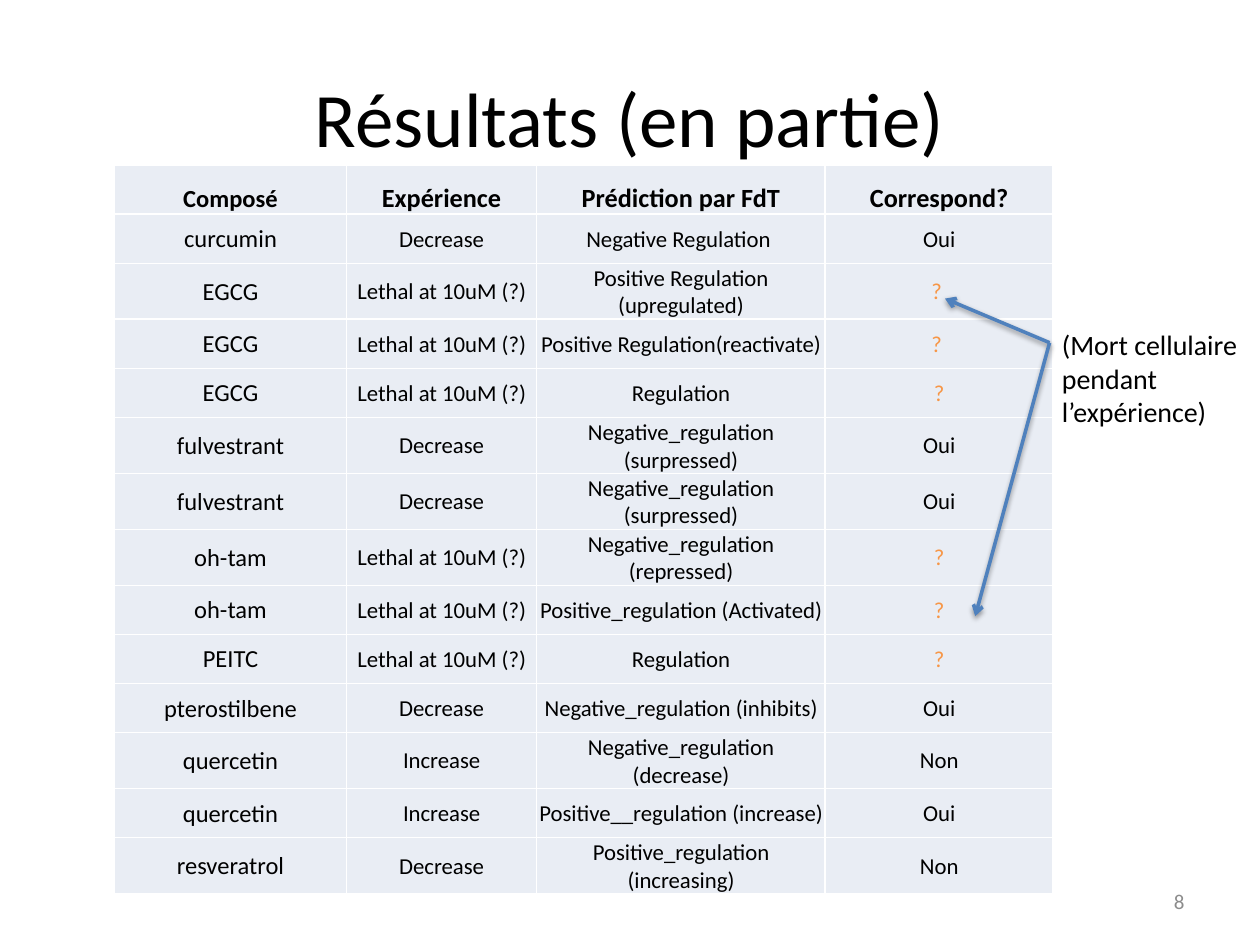
from dataclasses import dataclass

import pptx
import pptx.dml.color
import pptx.enum.shapes
import pptx.enum.text
import pptx.oxml
import pptx.oxml.ns
import pptx.util

W, H = 10, 7.5
FONT = "Calibri"
COLORS = {"text": "000000", "number": "8C8C8C", "cell": "E9EDF4",
          "border": "FFFFFF", "unsure": "F79646", "arrow": "4F81BD"}
ALIGN = pptx.enum.text.PP_ALIGN
ANCHOR = pptx.enum.text.MSO_ANCHOR
NS = pptx.oxml.ns.nsdecls("a")


@dataclass
class Box:
    """A place given as shares of the slide's width and height."""
    x: float
    y: float
    w: float
    h: float

    def emu(self) -> list[int]:
        return [pptx.util.Inches(round(v, 2)) for v in
                (self.x * W, self.y * H, self.w * W, self.h * H)]


@dataclass
class Result:
    compound: str
    experiment: str
    prediction: str
    match: str


LETHAL = "Lethal at 10uM (?)"
HEADER = Result("Composé", "Expérience", "Prédiction par FdT", "Correspond?")
RESULTS = [
    Result("curcumin", "Decrease", "Negative Regulation ", "Oui"),
    Result("EGCG", LETHAL, "Positive Regulation (upregulated)", "? "),
    Result("EGCG", LETHAL, "Positive Regulation(reactivate)", "? "),
    Result("EGCG", LETHAL, "Regulation", "?"),
    Result("fulvestrant", "Decrease", "Negative_regulation (surpressed)", "Oui"),
    Result("fulvestrant", "Decrease", "Negative_regulation (surpressed)", "Oui"),
    Result("oh-tam", LETHAL, "Negative_regulation (repressed)", "?"),
    Result("oh-tam", LETHAL, "Positive_regulation (Activated)", "?"),
    Result("PEITC", LETHAL, "Regulation", "?"),
    Result("pterostilbene", "Decrease", "Negative_regulation (inhibits)", "Oui"),
    Result("quercetin", "Increase", "Negative_regulation (decrease)", "Non"),
    Result("quercetin", "Increase", "Positive__regulation (increase)", "Oui"),
    Result("resveratrol", "Decrease", "Positive_regulation (increasing)", "Non"),
]
COLUMNS = [1.84, 1.51, 2.29, 1.81]
ROW_HEIGHT = 0.39


def rgb(name: str) -> pptx.dml.color.RGBColor:
    return pptx.dml.color.RGBColor.from_string(COLORS[name])


def write(tf, *lines: str, size: float, color: str = "text", bold: bool = False,
          align=ALIGN.LEFT, anchor=ANCHOR.TOP) -> None:
    """Fill a text frame, one paragraph for each line."""
    tf.word_wrap = True
    tf.vertical_anchor = anchor
    for i, line in enumerate(lines):
        p = tf.add_paragraph() if i else tf.paragraphs[0]
        p.alignment = align
        r = p.add_run()
        r.text = line
        r.font.name, r.font.size, r.font.bold = FONT, pptx.util.Pt(size), bold
        r.font.color.rgb = rgb(color)


def add_cell(cell, text: str, header: bool, first: bool) -> None:
    cell.margin_left = cell.margin_right = cell.margin_top = pptx.util.Inches(0.01)
    cell.margin_bottom = 0
    cell.vertical_anchor = ANCHOR.BOTTOM if header else ANCHOR.MIDDLE
    cell.fill.solid()
    cell.fill.fore_color.rgb = rgb("cell")
    size = 14 if first else 15 if header else 13
    color = "unsure" if text.strip() == "?" else "text"
    tf = cell.text_frame
    p = tf.paragraphs[0]
    p.alignment = ALIGN.CENTER
    r = p.add_run()
    r.text = text
    r.font.name, r.font.size, r.font.bold = FONT, pptx.util.Pt(size), header
    r.font.color.rgb = rgb(color)
    for i, side in enumerate("LRTB"):
        cell._tc.get_or_add_tcPr().insert(i, pptx.oxml.parse_xml(
            f'<a:ln{side} {NS} w="12700"><a:solidFill><a:srgbClr '
            f'val="{COLORS["border"]}"/></a:solidFill></a:ln{side}>'))


def add_results(s, x: float, y: float) -> None:
    rows = [HEADER, *RESULTS]
    box = Box(x, y, sum(COLUMNS) / W, ROW_HEIGHT * len(rows) / H)
    table = s.shapes.add_table(len(rows), len(COLUMNS), *box.emu()).table
    for column, width in zip(table.columns, COLUMNS):
        column.width = pptx.util.Inches(width)
    for i, row in enumerate(rows):
        table.rows[i].height = pptx.util.Inches(ROW_HEIGHT)
        texts = (row.compound, row.experiment, row.prediction, row.match)
        for j, text in enumerate(texts):
            add_cell(table.cell(i, j), text, header=i == 0, first=j == 0)


def add_arrow(s, start: tuple[float, float], end: tuple[float, float]) -> None:
    ends = [pptx.util.Inches(v) for v in (*start, *end)]
    line = s.shapes.add_connector(pptx.enum.shapes.MSO_CONNECTOR.STRAIGHT, *ends)
    line.line.color.rgb = rgb("arrow")
    line.line.width = pptx.util.Pt(2)
    line.line._get_or_add_ln().append(
        pptx.oxml.parse_xml(f'<a:tailEnd {NS} type="arrow"/>'))
    line._element.spPr.append(pptx.oxml.parse_xml(
        f'<a:effectLst {NS}><a:outerShdw blurRad="39370" dist="20320" dir="5400000" '
        f'rotWithShape="0"><a:srgbClr val="{COLORS["text"]}"><a:alpha val="38000"/>'
        f'</a:srgbClr></a:outerShdw></a:effectLst>'))


def main() -> None:
    prs = pptx.Presentation()
    prs.slide_width, prs.slide_height = pptx.util.Inches(W), pptx.util.Inches(H)
    s = prs.slides.add_slide(prs.slide_layouts[5])

    # Title
    title = s.shapes.title
    title.left, title.top, title.width, title.height = Box(0.05, 0.04, 0.9, 1 / 6).emu()
    write(title.text_frame, "Résultats (en partie)", size=44,
          align=ALIGN.CENTER, anchor=ANCHOR.MIDDLE)

    # Slide number
    number = s.shapes.add_textbox(*Box(0.717, 0.927, 0.233, 0.053).emu())
    write(number.text_frame, "8", size=12, color="number",
          align=ALIGN.RIGHT, anchor=ANCHOR.MIDDLE)

    # Table of results
    add_results(s, 0.091, 0.175)

    # Remark with arrows to the first and last uncertain results
    remark = s.shapes.add_textbox(*Box(0.833, 0.34, 0.167, 0.121).emu())
    write(remark.text_frame, "(Mort cellulaire", "pendant l’expérience)", size=16)
    for target in ((7.5, 2.37), (7.74, 4.89)):
        add_arrow(s, (8.33, 2.72), target)

    prs.save("out.pptx")


if __name__ == "__main__":
    main()
